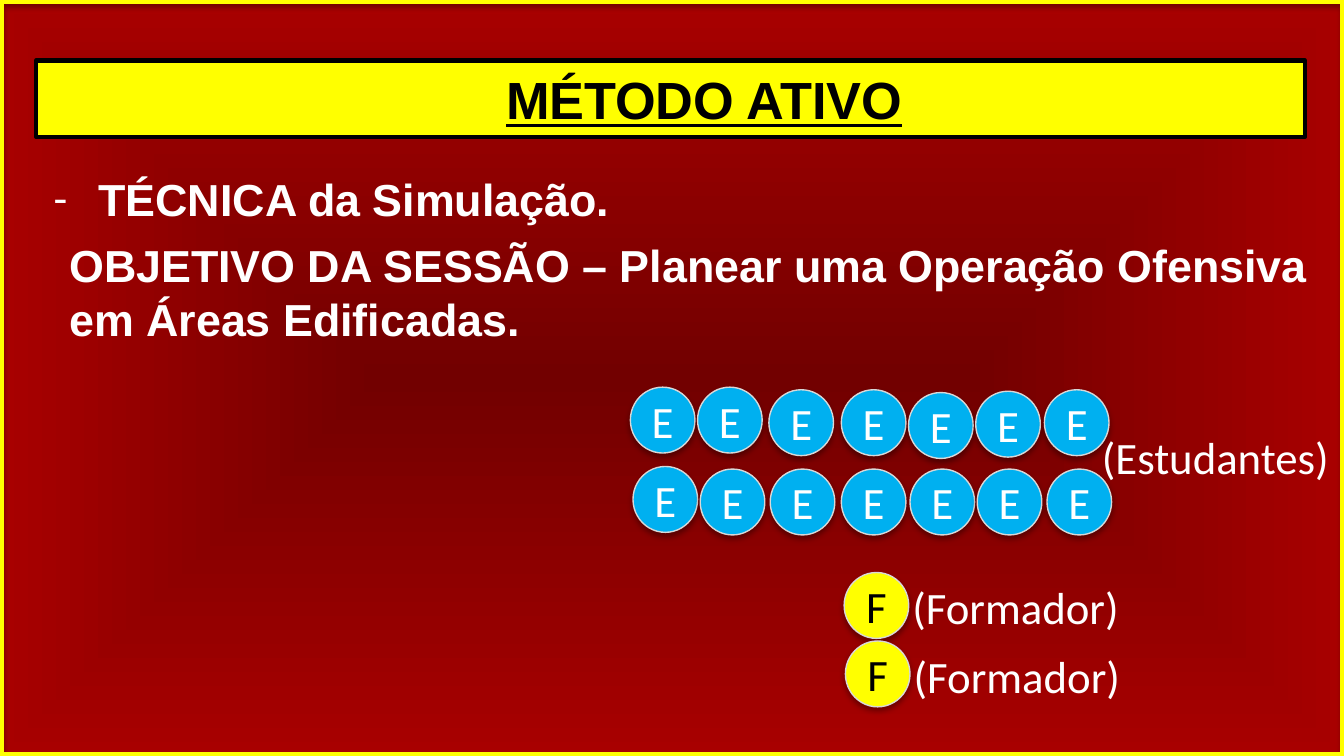
from dataclasses import dataclass

from lxml import etree
from pptx import Presentation
from pptx.dml.color import RGBColor
from pptx.enum.shapes import MSO_SHAPE
from pptx.enum.text import MSO_ANCHOR, PP_ALIGN
from pptx.oxml import parse_xml
from pptx.oxml.ns import nsdecls, qn
from pptx.util import Pt

RECTANGLE, OVAL = MSO_SHAPE.RECTANGLE, MSO_SHAPE.OVAL
TOP, MIDDLE = MSO_ANCHOR.TOP, MSO_ANCHOR.MIDDLE
LEFT, CENTER = PP_ALIGN.LEFT, PP_ALIGN.CENTER


@dataclass(frozen=True)
class Theme:
    center: str = "720000"
    edge: str = "A80000"
    yellow: str = "FFFF00"
    blue: str = "00B0F0"
    outline: str = "D8D8D8"
    black: str = "000000"
    white: str = "FFFFFF"
    heading_font: str = "Arial"
    label_font: str = "Calibri"
    title_size: int = 28
    body_size: int = 24


THEME = Theme()
WIDTH, HEIGHT = 720, 405
CIRCLE_W, CIRCLE_H = 34.6, 35.3

# Seats as (left, top) offsets inside the student group
STUDENT_SEATS = [
    (0, 0), (36, 0), (74.2, 1.4), (113, 1.4), (149, 2.9), (185, 2.2), (221.8, 1.4),
    (1.4, 42.5), (37.4, 43.9), (74.9, 43.9), (113, 43.9), (149.8, 43.9),
    (185.8, 43.9), (223.2, 43.9),
]


def rgb(value):
    return RGBColor.from_string(value)


def style_text(shape, text, font, size, color, align=LEFT, anchor=TOP, bold=False):
    frame = shape.text_frame
    frame.word_wrap = True
    frame.vertical_anchor = anchor
    frame.text = text
    paragraph = frame.paragraphs[0]
    paragraph.alignment = align
    run_font = paragraph.runs[0].font
    run_font.name, run_font.size, run_font.bold = font, Pt(size), bold
    run_font.color.rgb = rgb(color)
    return paragraph


def add_text(slide, box, text, font, bold=False):
    shape = slide.shapes.add_textbox(*map(Pt, box))
    return style_text(shape, text, font, THEME.body_size, THEME.white, bold=bold)


def set_line(shape, color, width):
    shape.line.color.rgb = rgb(color)
    shape.line.width = Pt(width)


def add_soft_shadow(shape):
    shape.shadow.inherit = False
    effects = shape._element.spPr.find(qn("a:effectLst"))
    shadow = etree.SubElement(effects, qn("a:outerShdw"), blurRad=str(Pt(3.1)),
                              dist=str(Pt(1.8)), dir="5400000", rotWithShape="0")
    color = etree.SubElement(shadow, qn("a:srgbClr"), val=THEME.black)
    etree.SubElement(color, qn("a:alpha"), val="35000")


def add_backdrop(slide, box):
    # Gradient spreading from the middle of the slide
    background = parse_xml(
        f'<p:bg {nsdecls("p", "a")}><p:bgPr><a:gradFill rotWithShape="1"><a:gsLst>'
        f'<a:gs pos="0"><a:srgbClr val="{THEME.center}"/></a:gs>'
        f'<a:gs pos="100000"><a:srgbClr val="{THEME.edge}"><a:alpha val="88000"/>'
        '</a:srgbClr></a:gs></a:gsLst><a:path path="shape"><a:fillToRect l="50000" '
        't="50000" r="50000" b="50000"/></a:path></a:gradFill><a:effectLst/>'
        '</p:bgPr></p:bg>')
    slide._element.cSld.insert(0, background)
    # Yellow frame
    frame = slide.shapes.add_shape(RECTANGLE, *map(Pt, box))
    frame.fill.background()
    set_line(frame, THEME.yellow, 4.5)
    add_soft_shadow(frame)


def add_title(slide, box):
    title = slide.shapes.title
    title.left, title.top, title.width, title.height = map(Pt, box)
    title.fill.solid()
    title.fill.fore_color.rgb = rgb(THEME.yellow)
    set_line(title, THEME.black, 2.25)
    paragraph = style_text(title, "MÉTODO ATIVO", THEME.heading_font,
                           THEME.title_size, THEME.black, CENTER, MIDDLE, True)
    paragraph.runs[0].font.underline = True
    paragraph._p.get_or_add_pPr().set("marL", str(Pt(36)))


def add_objective(slide, box):
    left, top, width, height = box
    # Technique, with a dash
    technique = add_text(slide, (left, top, width, 36), "TÉCNICA da Simulação.",
                         THEME.heading_font, True)
    properties = technique._p.get_or_add_pPr()
    properties.set("marL", str(Pt(24)))
    properties.set("indent", str(-Pt(24)))
    etree.SubElement(properties, qn("a:buFont"), typeface=THEME.label_font)
    etree.SubElement(properties, qn("a:buChar"), char="-")
    # Session objective
    add_text(slide, (left + 8.4, top + 35.3, width, height - 35.3),
             "OBJETIVO DA SESSÃO – Planear uma Operação Ofensiva em Áreas Edificadas.",
             THEME.heading_font, True)


def add_person(slide, left, top, letter, fill, color):
    person = slide.shapes.add_shape(OVAL, Pt(left), Pt(top), Pt(CIRCLE_W), Pt(CIRCLE_H))
    person.fill.solid()
    person.fill.fore_color.rgb = rgb(fill)
    set_line(person, THEME.outline, 0.75)
    add_soft_shadow(person)
    frame = person.text_frame
    frame.margin_left = frame.margin_right = frame.margin_top = frame.margin_bottom = 0
    style_text(person, letter, THEME.label_font, THEME.body_size, color, CENTER, MIDDLE)


def add_students(slide, box):
    left, top, width, _ = box
    for seat_x, seat_y in STUDENT_SEATS:
        add_person(slide, left + seat_x, top + seat_y, "E", THEME.blue, THEME.white)
    add_text(slide, (left + width - 12.3, top + 19.4, 146, 36), "(Estudantes)",
             THEME.label_font)


def add_trainer(slide, box):
    left, top, width, height = box
    add_person(slide, left, top, "F", THEME.yellow, THEME.black)
    add_text(slide, (left + 29.5, top + 0.4, width - 29.5, height), "(Formador)",
             THEME.label_font)


def main():
    presentation = Presentation()
    presentation.slide_width, presentation.slide_height = Pt(WIDTH), Pt(HEIGHT)
    slide = presentation.slides.add_slide(presentation.slide_layouts[5])
    add_backdrop(slide, (0, 0, WIDTH, HEIGHT))
    add_title(slide, (19.4, 32.4, 679.7, 41))
    add_objective(slide, (21.6, 88.6, 677.5, 100.8))
    add_students(slide, (337.7, 207.4, 257.8, 79.2))
    for trainer_left, trainer_top in ((452.2, 306.7), (452.9, 343.4)):
        add_trainer(slide, (trainer_left, trainer_top, 175.7, 36))
    presentation.save("out.pptx")


if __name__ == "__main__":
    main()
